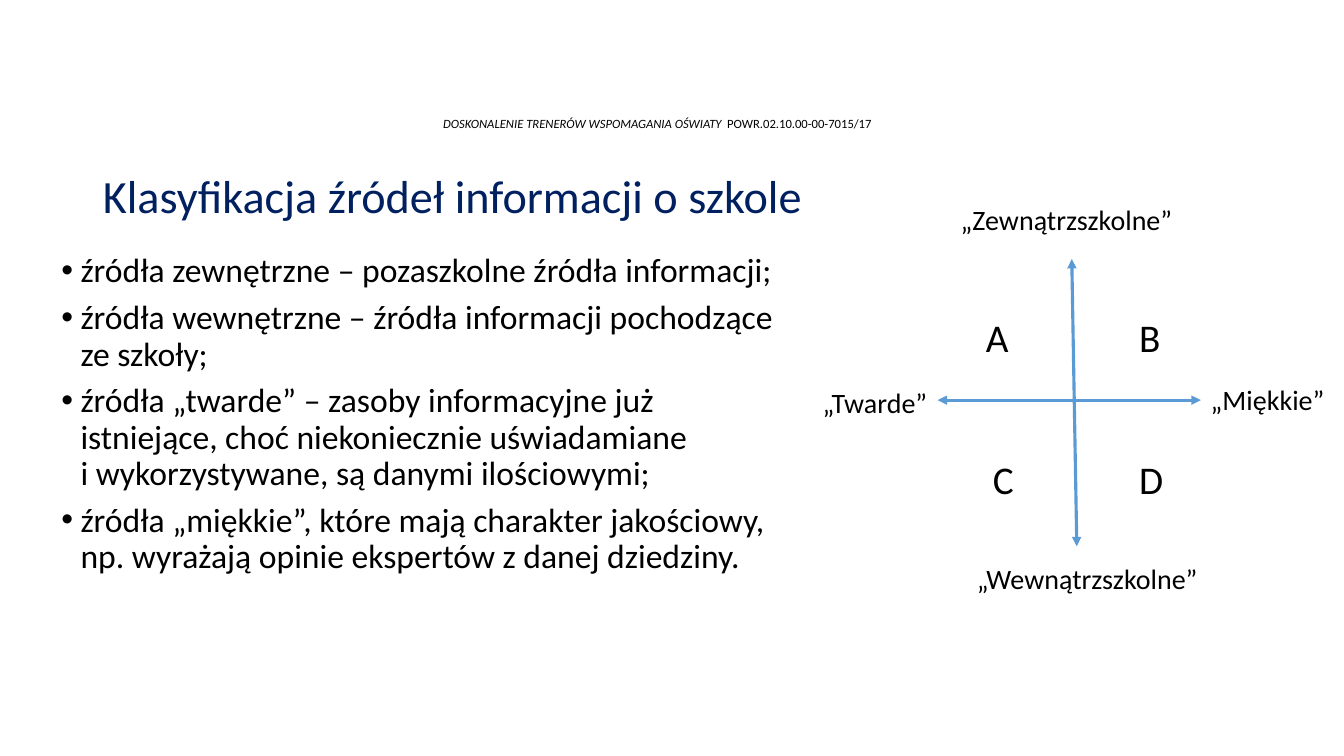
from lxml.etree import SubElement
from pptx import Presentation
from pptx.dml.color import RGBColor
from pptx.enum.shapes import MSO_CONNECTOR as Connector
from pptx.enum.text import MSO_ANCHOR as Anchor, MSO_AUTO_SIZE as AutoSize, PP_ALIGN as Align
from pptx.oxml.ns import qn
from pptx.util import Pt

EMU_PER_PX = 9144
FONT = "Calibri"
COLORS = {"title": "002060", "text": "000000", "axis": "5B9BD5"}
HEADER = [("DOSKONALENIE TRENERÓW WSPOMAGANIA OŚWIATY  ", True),
          ("POWR.02.10.00-00-7015/17", False)]
TITLE = "Klasyfikacja źródeł informacji o szkole"
SOURCES = [
    "źródła zewnętrzne – pozaszkolne źródła informacji;",
    "źródła wewnętrzne – źródła informacji pochodzące ze szkoły;",
    "źródła „twarde” – zasoby informacyjne już istniejące, choć niekoniecznie "
    "uświadamiane \vi wykorzystywane, są danymi ilościowymi;",
    "źródła „miękkie”, które mają charakter jakościowy, np. wyrażają opinie "
    "ekspertów z danej dziedziny.",
]
AXES = [(1063, 257, 1068, 542), (930, 397, 1191, 397)]
AXIS_LABELS = [
    ("„Twarde”", (806, 378, 125, 44)),
    ("„Miękkie”", (1191, 375, 134, 44)),
    ("„Zewnątrzszkolne”", (943, 196, 232, 44)),
    ("„Wewnątrzszkolne”", (959, 552, 241, 44)),
]
QUADRANTS = [("A", 968, 306), ("B", 1120, 306), ("C", 975, 447), ("D", 1120, 447)]


def px(*lengths):
    """Turn pixel lengths into EMU."""
    return [length * EMU_PER_PX for length in lengths]


def set_values(target, values):
    """Set attributes of an object from a dict."""
    for name, value in values.items():
        setattr(target, name, value)


def set_font(font, size, color="text", **values):
    """Give a font its face, size and colour."""
    set_values(font, {"name": FONT, "size": Pt(size), **values})
    font.color.rgb = RGBColor.from_string(COLORS[color])


def add_box(slide, place, wrap=True, auto_size=AutoSize.NONE):
    """Add an empty text box and return its frame."""
    frame = slide.shapes.add_textbox(*px(*place)).text_frame
    set_values(frame, {"word_wrap": wrap, "auto_size": auto_size})
    return frame


def add_label(slide, text, place, size, wrap):
    """Add a one-line label that grows with its text."""
    paragraph = add_box(slide, place, wrap, AutoSize.SHAPE_TO_FIT_TEXT).paragraphs[0]
    paragraph.text = text
    set_font(paragraph.font, size)


def add_header(slide):
    """Add the centred project line."""
    paragraph = add_box(slide, (79, 112, 1146, 24)).paragraphs[0]
    set_values(paragraph, {"alignment": Align.CENTER, "line_spacing": 0.9})
    for text, italic in HEADER:
        run = paragraph.add_run()
        run.text = text
        set_font(run.font, 9, italic=italic)


def format_title(slide):
    """Place and format the title placeholder."""
    title = slide.shapes.title
    set_values(title, dict(zip(("left", "top", "width", "height"), px(92, 146, 1150, 101))))
    frame = title.text_frame
    frame.text = TITLE
    set_values(frame, {"vertical_anchor": Anchor.MIDDLE, "word_wrap": True,
                       "auto_size": AutoSize.NONE})
    paragraph = frame.paragraphs[0]
    set_values(paragraph, {"alignment": Align.LEFT, "line_spacing": 0.9})
    set_font(paragraph.runs[0].font, 33, "title")


def add_bullets(slide):
    """Add the bulleted list of source kinds."""
    frame = add_box(slide, (51, 247, 728, 378))
    indent = px(19)[0]
    for index, text in enumerate(SOURCES):
        paragraph = frame.add_paragraph() if index else frame.paragraphs[0]
        paragraph.text = text
        set_values(paragraph, {"line_spacing": 0.9, "space_before": Pt(7.5 if index else 0)})
        properties = paragraph._p.get_or_add_pPr()
        properties.set("marL", str(indent))
        properties.set("indent", str(-indent))
        SubElement(properties, qn("a:buFont"), typeface="Arial")
        SubElement(properties, qn("a:buChar"), char="•")
        set_font(paragraph.font, 24)


def add_axis(slide, ends):
    """Add a line with an arrowhead at both ends."""
    axis = slide.shapes.add_connector(Connector.STRAIGHT, *px(*ends))
    axis.line.width = Pt(2.25)
    axis.line.color.rgb = RGBColor.from_string(COLORS["axis"])
    outline = axis.line._get_or_add_ln()
    for end in ("a:headEnd", "a:tailEnd"):
        SubElement(outline, qn(end), type="triangle")
    SubElement(axis._element.spPr, qn("a:effectLst"))


def main():
    """Build and save the slide."""
    presentation = Presentation()
    set_values(presentation, dict(zip(("slide_width", "slide_height"), px(1333, 750))))
    slide = presentation.slides.add_slide(presentation.slide_layouts.get_by_name("Title Only"))
    add_header(slide)
    format_title(slide)
    add_bullets(slide)
    for ends in AXES:
        add_axis(slide, ends)
    for text, place in AXIS_LABELS:
        add_label(slide, text, place, 20, wrap=False)
    for letter, left, top in QUADRANTS:
        add_label(slide, letter, (left, top, 29, 57), 28, wrap=True)
    presentation.save("out.pptx")


if __name__ == "__main__":
    main()
